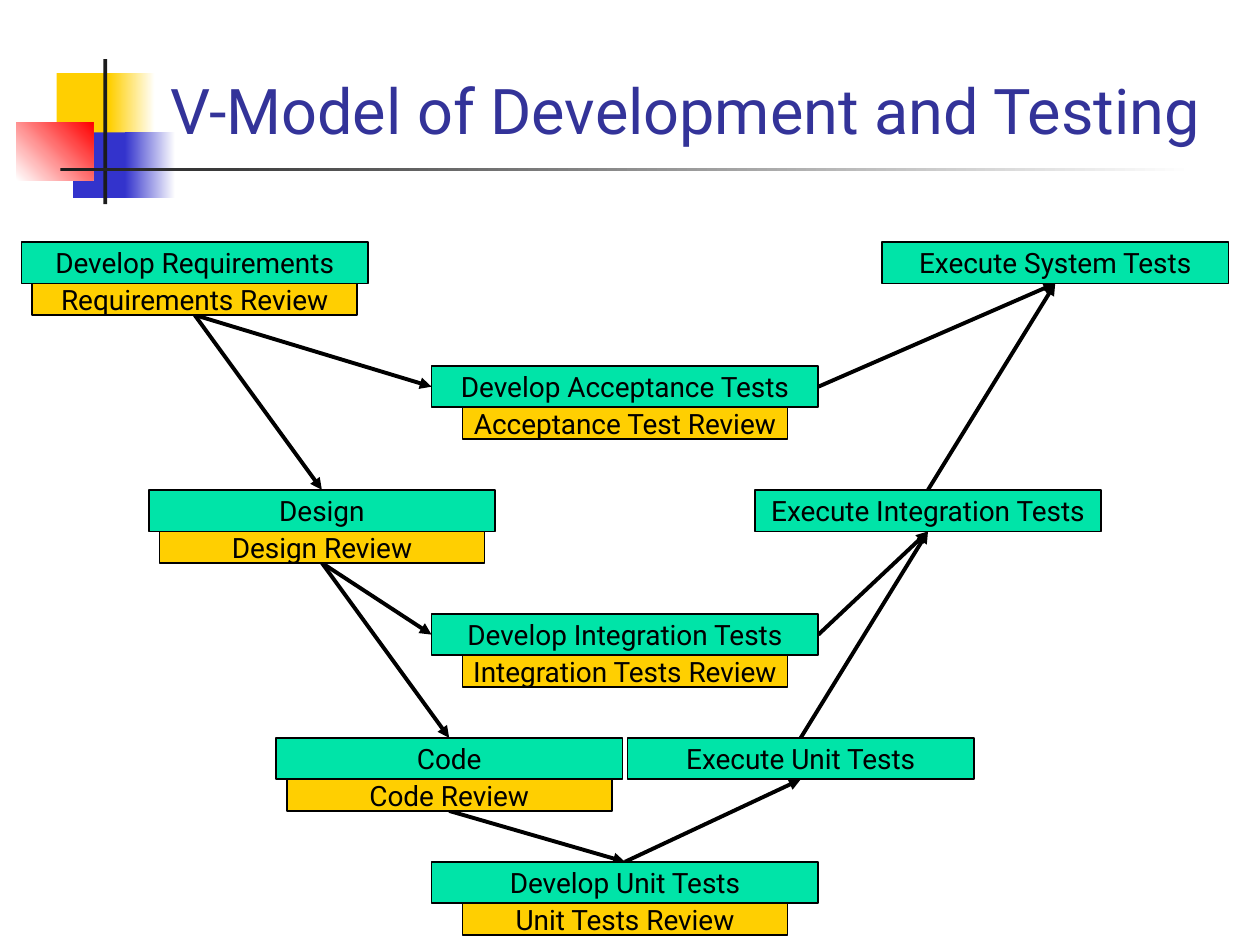
from dataclasses import dataclass

from lxml import etree
from pptx import Presentation
from pptx.dml.color import RGBColor
from pptx.enum.shapes import MSO_CONNECTOR, MSO_SHAPE
from pptx.enum.text import MSO_ANCHOR, MSO_AUTO_SIZE, PP_ALIGN
from pptx.oxml.ns import qn
from pptx.util import Inches, Pt

RECTANGLE = MSO_SHAPE.RECTANGLE
STRAIGHT = MSO_CONNECTOR.STRAIGHT
CENTER, LEFT = PP_ALIGN.CENTER, PP_ALIGN.LEFT
MIDDLE, BOTTOM = MSO_ANCHOR.MIDDLE, MSO_ANCHOR.BOTTOM
NO_AUTOFIT = MSO_AUTO_SIZE.NONE
TOP_SITE, LEFT_SITE, BOTTOM_SITE, RIGHT_SITE = range(4)


@dataclass(frozen=True)
class Theme:
    font: str = "Roboto"
    title_size: int = 36
    label_size: int = 16
    outline: float = 1
    arrow: float = 2.25
    title: str = "333399"
    ink: str = "000000"
    bar: str = "1C1C1C"
    activity: str = "00E4A8"
    gold: str = "FFCF01"
    blue: str = "3333CC"
    red: str = "FF0000"
    paper: str = "FFFFFF"


THEME = Theme()
TITLE_BOX = (1.25, 0.39, 8.52, 0.83)
ORNAMENT_BOX = (0.13, 0.47, 9.35, 1.15)
DIAGRAM_BOX = (0.17, 1.92, 9.58, 5.5)

ACTIVITY_HEIGHT, REVIEW_HEIGHT = 0.33, 0.25
SIDE_WIDTH, MIDDLE_WIDTH, REVIEW_WIDTH = 2.75, 3.07, 2.58
COLUMN_STEP = 1.01

STAGES = [
    ("left", 0, "Develop Requirements", "Requirements Review"),
    ("right", 0, "Execute System Tests", None),
    ("middle", 1, "Develop Acceptance Tests", "Acceptance Test Review"),
    ("left", 2, "Design", "Design Review"),
    ("right", 2, "Execute Integration Tests", None),
    ("middle", 3, "Develop Integration Tests", "Integration Tests Review"),
    ("left", 4, "Code", "Code Review"),
    ("right", 4, "Execute Unit Tests", None),
    ("middle", 5, "Develop Unit Tests", "Unit Tests Review"),
]
ROUTES = [
    ("Requirements Review", BOTTOM_SITE, "Design", TOP_SITE),
    ("Design Review", BOTTOM_SITE, "Code", TOP_SITE),
    ("Code Review", BOTTOM_SITE, "Develop Unit Tests", TOP_SITE),
    ("Develop Unit Tests", TOP_SITE, "Execute Unit Tests", BOTTOM_SITE),
    ("Execute Unit Tests", TOP_SITE, "Execute Integration Tests", BOTTOM_SITE),
    ("Execute Integration Tests", TOP_SITE, "Execute System Tests", BOTTOM_SITE),
    ("Requirements Review", BOTTOM_SITE, "Develop Acceptance Tests", LEFT_SITE),
    ("Develop Acceptance Tests", RIGHT_SITE, "Execute System Tests", BOTTOM_SITE),
    ("Design Review", BOTTOM_SITE, "Develop Integration Tests", LEFT_SITE),
    ("Develop Integration Tests", RIGHT_SITE, "Execute Integration Tests", BOTTOM_SITE),
]


def apply_format(target, values):
    for name, value in values.items():
        setattr(target, name, value)


def color(value):
    return RGBColor.from_string(value)


def add_block(slide, box, *colors, angle=0):
    shape = slide.shapes.add_shape(RECTANGLE, *map(Inches, box))
    shape.shadow.inherit = False
    shape.line.fill.background()
    if len(colors) == 1:
        shape.fill.solid()
        shape.fill.fore_color.rgb = color(colors[0])
    else:
        shape.fill.gradient()
        shape.fill.gradient_angle = angle
        for stop, value in zip(shape.fill.gradient_stops, colors):
            stop.color.rgb = color(value)
    return shape


def write_text(shape, text, size, text_color, alignment, frame_format):
    frame = shape.text_frame
    frame.text = text
    apply_format(frame, frame_format)
    paragraph = frame.paragraphs[0]
    paragraph.alignment = alignment
    font = paragraph.runs[0].font
    apply_format(font, {"name": THEME.font, "size": Pt(size)})
    font.color.rgb = color(text_color)


def add_ornament(slide, box):
    left, top, width, height = box
    blocks = [
        ((0.32, 0.11, 0.48, 0.52), (THEME.gold,), 0),
        ((0.74, 0.11, 0.36, 0.52), (THEME.gold, THEME.paper), 0),
        ((0.45, 0.58, 0.46, 0.52), (THEME.blue,), 0),
        ((0.86, 0.58, 0.4, 0.52), (THEME.blue, THEME.paper), 0),
        ((0, 0.5, 0.61, 0.46), (THEME.paper, THEME.red), 45),
        ((0.69, 0, 0.03, height), (THEME.bar,), 0),
        ((0.35, 0.86, width - 0.35, 0.03), (THEME.bar, THEME.paper), 0),
    ]
    for (x, y, block_width, block_height), colors, angle in blocks:
        block_box = (left + x, top + y, block_width, block_height)
        add_block(slide, block_box, *colors, angle=angle)


def add_title(slide, box):
    title = slide.shapes.title
    apply_format(title, dict(zip(("left", "top", "width", "height"), map(Inches, box))))
    write_text(title, "V-Model of Development and Testing", THEME.title_size, THEME.title, LEFT,
               {"vertical_anchor": BOTTOM, "word_wrap": True, "auto_size": NO_AUTOFIT})


def add_arrow(slide):
    arrow = slide.shapes.add_connector(STRAIGHT, 0, 0, 0, 0)
    arrow.line.width = Pt(THEME.arrow)
    arrow.line.color.rgb = color(THEME.ink)
    etree.SubElement(arrow.line._get_or_add_ln(), qn("a:tailEnd"), type="triangle")
    etree.SubElement(arrow._element.spPr, qn("a:effectLst"))
    return arrow


def add_label(slide, center, top, width, height, text, fill):
    shape = add_block(slide, (center - width / 2, top, width, height), fill)
    shape.line.color.rgb = color(THEME.ink)
    shape.line.width = Pt(THEME.outline)
    write_text(shape, text, THEME.label_size, THEME.ink, CENTER,
               {"vertical_anchor": MIDDLE, "word_wrap": False})
    return shape


def add_diagram(slide, box):
    left, top, width, height = box
    row_step = (height - ACTIVITY_HEIGHT - REVIEW_HEIGHT) / 5
    arrows = [add_arrow(slide) for _ in ROUTES]
    labels = {}
    for side, row, activity, review in STAGES:
        offset = SIDE_WIDTH / 2 + COLUMN_STEP * row / 2
        center = left + {"left": offset, "middle": width / 2, "right": width - offset}[side]
        activity_top = top + row * row_step
        activity_width = MIDDLE_WIDTH if side == "middle" else SIDE_WIDTH
        labels[activity] = add_label(slide, center, activity_top, activity_width,
                                     ACTIVITY_HEIGHT, activity, THEME.activity)
        if review:
            labels[review] = add_label(slide, center, activity_top + ACTIVITY_HEIGHT,
                                       REVIEW_WIDTH, REVIEW_HEIGHT, review, THEME.gold)
    for arrow, (source, source_site, target, target_site) in zip(arrows, ROUTES):
        arrow.begin_connect(labels[source], source_site)
        arrow.end_connect(labels[target], target_site)


def main():
    presentation = Presentation()
    apply_format(presentation, {"slide_width": Inches(10), "slide_height": Inches(7.5)})
    slide = presentation.slides.add_slide(presentation.slide_layouts[5])
    add_ornament(slide, ORNAMENT_BOX)
    add_title(slide, TITLE_BOX)
    add_diagram(slide, DIAGRAM_BOX)
    presentation.save("out.pptx")


if __name__ == "__main__":
    main()
